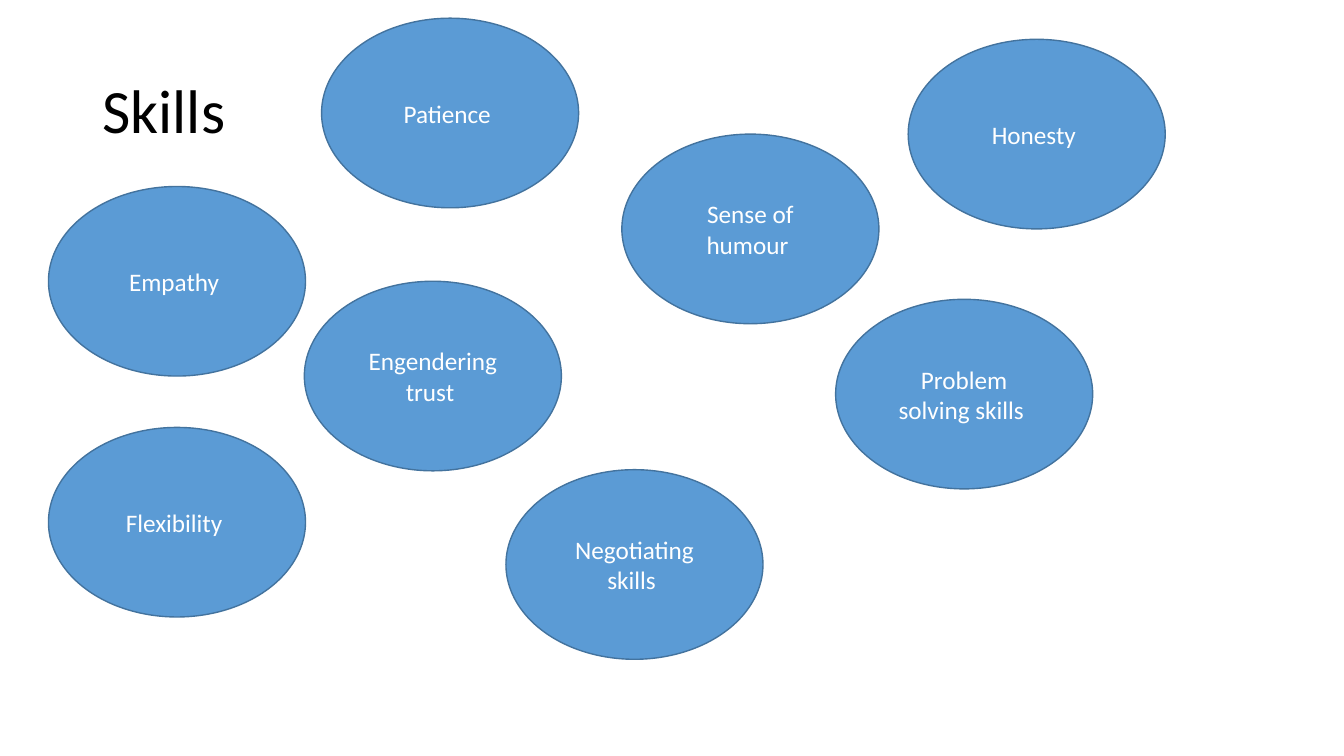
from pptx import Presentation
from pptx.dml.color import RGBColor
from pptx.enum.shapes import MSO_SHAPE
from pptx.enum.text import MSO_ANCHOR, PP_ALIGN
from pptx.util import Pt

BLACK = RGBColor(0x00, 0x00, 0x00)
WHITE = RGBColor(0xFF, 0xFF, 0xFF)
BLUE = RGBColor(0x5B, 0x9B, 0xD5)
EDGE = RGBColor(0x43, 0x73, 0x9E)

WIDE, HIGH = 183.6, 135.4
SKILLS = [
    ("Empathy ", 34.6, 133.2),
    ("Patience ", 229.7, 13),
    ("Engendering trust ", 217.4, 200.9),
    ("Flexibility ", 34.6, 305.3),
    ("Sense of humour ", 444.2, 95.8),
    ("Negotiating skills ", 361.4, 335.5),
    ("Honesty ", 648.7, 28.1),
    ("Problem solving skills ", 596.9, 213.8),
]


def assign(item, values):
    for name, value in values.items():
        setattr(item, name, value)


def write(shape, text, size, color, align, lead):
    frame = shape.text_frame
    assign(frame, {"text": text, "word_wrap": True,
                   "vertical_anchor": MSO_ANCHOR.MIDDLE})
    para = frame.paragraphs[0]
    assign(para, {"alignment": align, "line_spacing": lead})
    font = para.runs[0].font
    assign(font, {"name": "Calibri", "size": Pt(size)})
    font.color.rgb = color


def title(slide, text, left, top, width, height):
    shape = slide.shapes.title
    assign(shape, {"left": Pt(left), "top": Pt(top),
                   "width": Pt(width), "height": Pt(height)})
    write(shape, text, 44, BLACK, PP_ALIGN.LEFT, 0.9)


def bubble(slide, text, left, top, width, height):
    shape = slide.shapes.add_shape(
        MSO_SHAPE.OVAL, Pt(left), Pt(top), Pt(width), Pt(height))
    shape.shadow.inherit = False
    shape.fill.solid()
    shape.fill.fore_color.rgb = BLUE
    shape.line.color.rgb = EDGE
    shape.line.width = Pt(1)
    write(shape, text, 18, WHITE, PP_ALIGN.CENTER, 1.0)


def main():
    deck = Presentation()
    assign(deck, {"slide_width": Pt(960), "slide_height": Pt(540)})
    slide = deck.slides.add_slide(deck.slide_layouts[5])
    title(slide, "Skills", 66, 28.8, 828, 104.4)
    for text, left, top in SKILLS:
        bubble(slide, text, left, top, WIDE, HIGH)
    deck.save("out.pptx")


if __name__ == "__main__":
    main()
